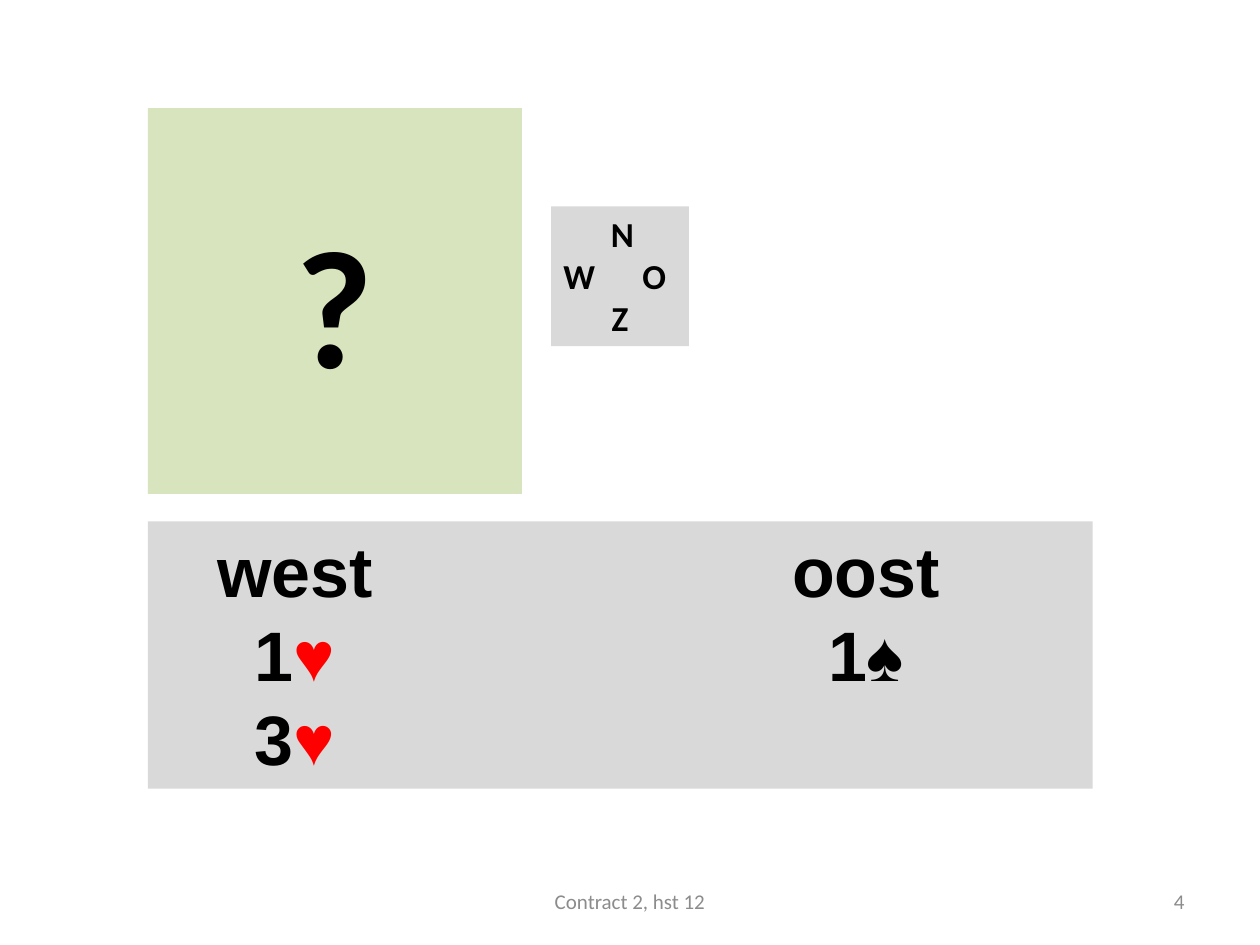
"""Build a bridge bidding slide with a question panel, a compass and an auction."""
from lxml.etree import SubElement
from pptx import Presentation
from pptx.dml.color import RGBColor
from pptx.enum.shapes import MSO_SHAPE
from pptx.enum.text import MSO_ANCHOR, PP_ALIGN
from pptx.oxml.ns import qn
from pptx.util import Cm, Pt

COLORS = {
    "green": "D7E4BD",
    "grey": "D9D9D9",
    "black": "000000",
    "red": "FF0000",
    "footer": "8C8C8C",
}


def add_panel(left, top, width, height, fill, anchor):
    panel = slide.shapes.add_shape(
        MSO_SHAPE.RECTANGLE, Cm(left), Cm(top), Cm(width), Cm(height)
    )
    panel.shadow.inherit = False
    panel.fill.solid()
    panel.fill.fore_color.rgb = RGBColor.from_string(COLORS[fill])
    panel.line.fill.background()
    panel.text_frame.word_wrap = True
    panel.text_frame.vertical_anchor = anchor
    return panel.text_frame


def write_line(paragraph, parts, size, font, align=PP_ALIGN.LEFT, bold=True, tabs=()):
    paragraph.alignment = align
    for text, color in parts:
        run = paragraph.add_run()
        run.text = text
        run.font.size = Pt(size)
        run.font.name = font
        run.font.bold = bold
        run.font.color.rgb = RGBColor.from_string(COLORS[color])
    if tabs:
        stops = SubElement(paragraph._p.get_or_add_pPr(), qn("a:tabLst"))
        for position in tabs:
            SubElement(stops, qn("a:tab"), pos=str(Cm(position)), algn="ctr")


prs = Presentation()
prs.slide_width = Cm(25.4)
prs.slide_height = Cm(19.05)
slide = prs.slides.add_slide(prs.slide_layouts[6])

question = add_panel(2.98, 2.18, 7.54, 7.78, "green", MSO_ANCHOR.MIDDLE)
write_line(question.paragraphs[0], [("?", "black")], 96, "Calibri", PP_ALIGN.CENTER)

compass = add_panel(11.11, 4.16, 2.78, 2.82, "grey", MSO_ANCHOR.TOP)
compass_rows = [("\tN", 1.19), ("W\tO", 1.83), ("\tZ", 1.14)]
for index, (directions, tab) in enumerate(compass_rows):
    row = compass.add_paragraph() if index else compass.paragraphs[0]
    write_line(row, [(directions, "black")], 20, "Calibri", tabs=[tab])

auction = add_panel(2.98, 10.51, 19.05, 5.39, "grey", MSO_ANCHOR.TOP)
bidding_rows = [
    [("\twest\toost", "black")],
    [("\t1", "black"), ("♥", "red"), ("\t1♠", "black")],
    [("\t3", "black"), ("♥", "red")],
]
for index, bids in enumerate(bidding_rows):
    row = auction.add_paragraph() if index else auction.paragraphs[0]
    write_line(row, bids, 40, "Arial", tabs=[2.72, 14.23])

footers = [
    ("4", 18.2, 5.93, PP_ALIGN.RIGHT),
    ("Contract 2, hst 12", 8.68, 8.04, PP_ALIGN.CENTER),
]
for text, left, width, align in footers:
    footer = slide.shapes.add_textbox(Cm(left), Cm(17.66), Cm(width), Cm(1.01)).text_frame
    footer.word_wrap = True
    footer.vertical_anchor = MSO_ANCHOR.MIDDLE
    write_line(footer.paragraphs[0], [(text, "footer")], 12, "Calibri", align, bold=False)

prs.save("out.pptx")
